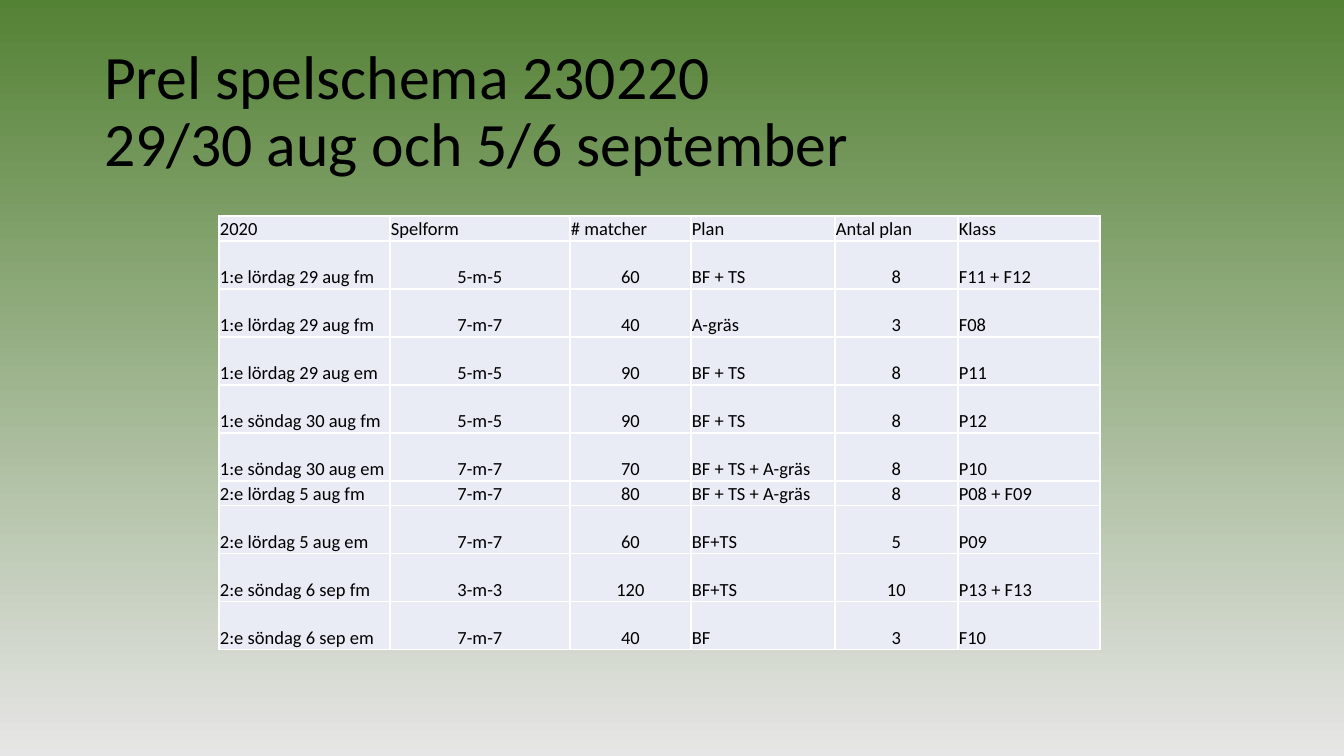
from dataclasses import dataclass

from lxml import etree
from pptx import Presentation
from pptx.dml.color import RGBColor
from pptx.enum.text import MSO_ANCHOR, MSO_AUTO_SIZE, PP_ALIGN
from pptx.oxml.ns import qn
from pptx.util import Pt

LEFT, CENTER = PP_ALIGN.LEFT, PP_ALIGN.CENTER
MIDDLE, BOTTOM = MSO_ANCHOR.MIDDLE, MSO_ANCHOR.BOTTOM
NO_AUTOFIT = MSO_AUTO_SIZE.NONE
PX_PER_INCH = 121
TITLE_ONLY = 5


@dataclass(frozen=True)
class Theme:
    font: str = "Calibri"
    title_size: float = 36.7
    table_size: float = 11
    border_width: float = 1
    text: str = "000000"
    cell: str = "E9EBF5"
    border: str = "FFFFFF"
    sky: str = "548235"
    ground: str = "E7E6E6"


THEME = Theme()

TITLE = "Prel spelschema 230220 \v29/30 aug och 5/6 september"
SCHEDULE = [
    ("2020", "Spelform", "# matcher", "Plan", "Antal plan", "Klass"),
    ("1:e lördag 29 aug fm", "5-m-5", "60", "BF + TS", "8", "F11 + F12"),
    ("1:e lördag 29 aug fm", "7-m-7", "40", "A-gräs", "3", "F08"),
    ("1:e lördag 29 aug em", "5-m-5", "90", "BF + TS", "8", "P11"),
    ("1:e söndag 30 aug fm", "5-m-5", "90", "BF + TS", "8", "P12"),
    ("1:e söndag 30 aug em", "7-m-7", "70", "BF + TS + A-gräs", "8", "P10"),
    ("2:e lördag 5 aug fm", "7-m-7", "80", "BF + TS + A-gräs", "8", "P08 + F09"),
    ("2:e lördag 5 aug em", "7-m-7", "60", "BF+TS", "5", "P09"),
    ("2:e söndag 6 sep fm", "3-m-3", "120", "BF+TS", "10", "P13 + F13"),
    ("2:e söndag 6 sep em", "7-m-7", "40", "BF", "3", "F10"),
]
COL_WIDTHS = (171, 180, 121, 144, 123, 142)
CENTERED_COLS = {1, 2, 4}
SHORT_ROWS = {0, 6}
SHORT_HEIGHT, TALL_HEIGHT = 25, 48


def px(n):
    return round(n * 914400 / PX_PER_INCH)


def rgb(value):
    return RGBColor.from_string(value)


def style_paragraph(p, size, align):
    p.alignment = align
    p.font.name = THEME.font
    p.font.size = Pt(size)
    p.font.bold = False
    p.font.color.rgb = rgb(THEME.text)


def set_background(s):
    fill = s.background.fill
    fill.gradient()
    fill.gradient_angle = 270
    for stop, color in zip(fill.gradient_stops, (THEME.sky, THEME.ground)):
        stop.color.rgb = rgb(color)


def set_title(s, text, left, top, width, height):
    title = s.shapes.title
    title.left, title.top = px(left), px(top)
    title.width, title.height = px(width), px(height)
    tf = title.text_frame
    tf.auto_size = NO_AUTOFIT
    tf.vertical_anchor = MIDDLE
    p = tf.paragraphs[0]
    p.text = text
    p.line_spacing = 0.9
    style_paragraph(p, THEME.title_size, LEFT)


def add_borders(cell):
    tc_pr = cell._tc.get_or_add_tcPr()
    for side in ("lnL", "lnR", "lnT", "lnB"):
        line = etree.SubElement(tc_pr, qn(f"a:{side}"), w=str(Pt(THEME.border_width)))
        solid = etree.SubElement(line, qn("a:solidFill"))
        etree.SubElement(solid, qn("a:srgbClr"), val=THEME.border)


def fill_cell(cell, text, align):
    cell.margin_left = cell.margin_right = cell.margin_top = px(1)
    cell.margin_bottom = 0
    cell.vertical_anchor = BOTTOM
    add_borders(cell)
    cell.fill.solid()
    cell.fill.fore_color.rgb = rgb(THEME.cell)
    p = cell.text_frame.paragraphs[0]
    p.text = text
    style_paragraph(p, THEME.table_size, align)


def add_schedule(s, left, top):
    heights = [SHORT_HEIGHT if i in SHORT_ROWS else TALL_HEIGHT
               for i in range(len(SCHEDULE))]
    table = s.shapes.add_table(len(SCHEDULE), len(COL_WIDTHS), px(left), px(top),
                               px(sum(COL_WIDTHS)), px(sum(heights))).table
    table.horz_banding = False
    table.first_row = False
    for column, width in zip(table.columns, COL_WIDTHS):
        column.width = px(width)
    for i, (row, height) in enumerate(zip(table.rows, heights)):
        row.height = px(height)
        for j, text in enumerate(SCHEDULE[i]):
            centered = i > 0 and j in CENTERED_COLS
            fill_cell(table.cell(i, j), text, CENTER if centered else LEFT)


def main():
    prs = Presentation()
    prs.slide_width, prs.slide_height = px(1344), px(756)
    s = prs.slides.add_slide(prs.slide_layouts[TITLE_ONLY])
    set_background(s)
    set_title(s, TITLE, 92, 40, 1159, 146)
    add_schedule(s, 219, 216)
    prs.save("out.pptx")


if __name__ == "__main__":
    main()
